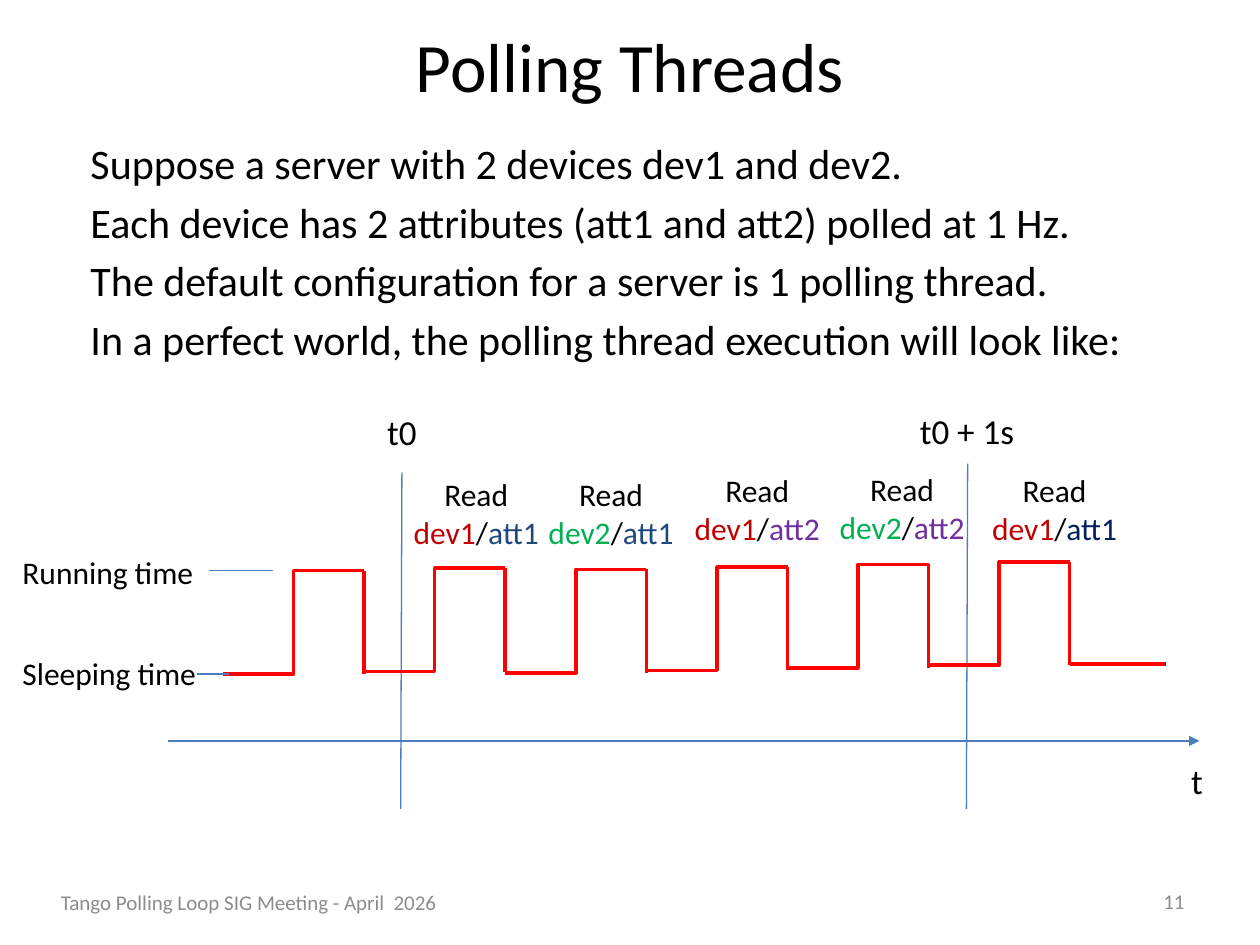
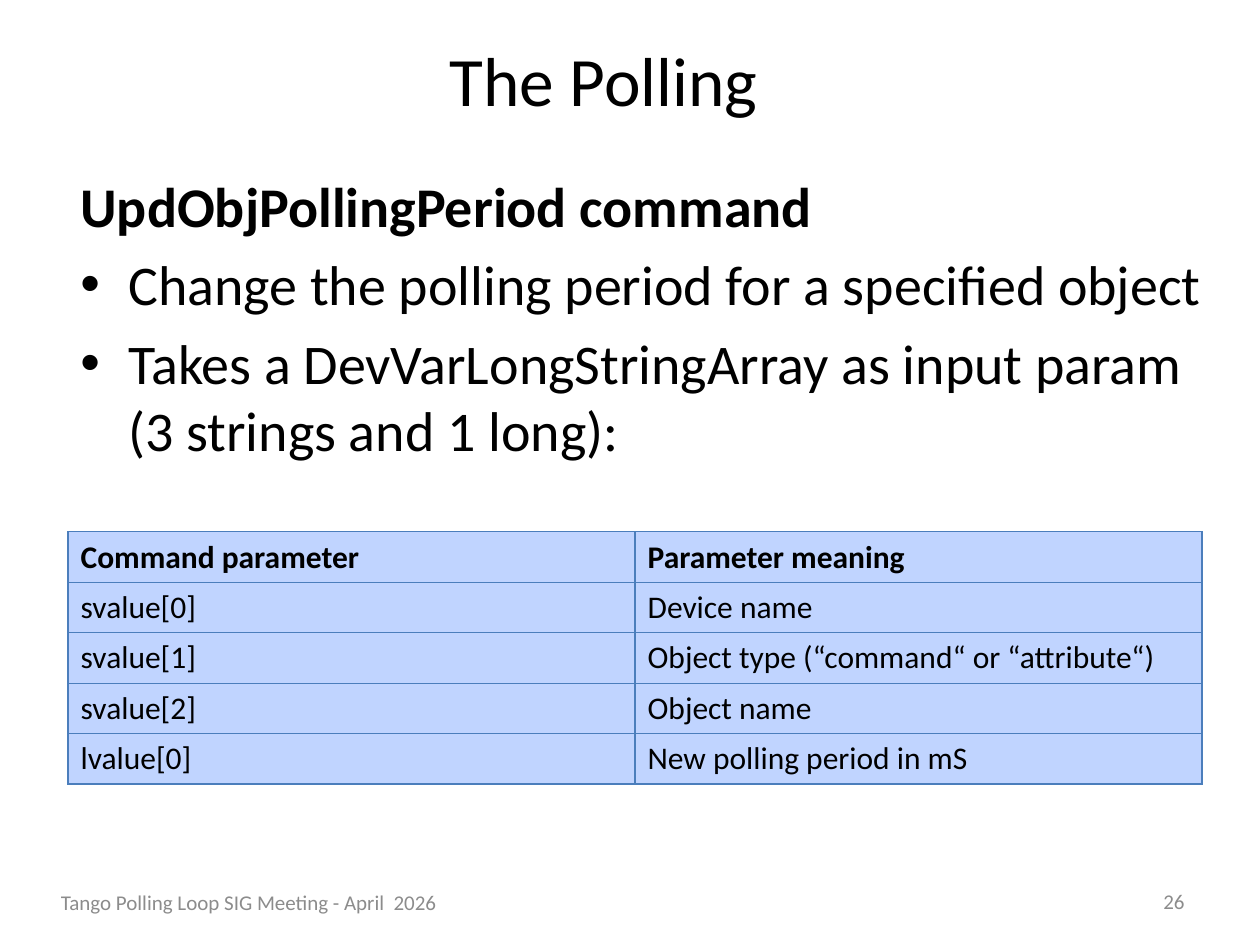
import pptx
import pptx.dml.color
import pptx.enum.shapes
import pptx.enum.text
import pptx.oxml
import pptx.oxml.ns
import pptx.util
from pptx.util import Inches

BLACK, GREY, BLUE, RED = "000000", "8C8C8C", "4B7EBC", "FF0000"
DEV_COLORS = {"dev1": "C00000", "dev2": "00B050"}
CELL_FILL = "C0D4FF"
FOOTER = "Tango Polling Loop SIG Meeting - April  2026"
LEFT = pptx.enum.text.PP_ALIGN.LEFT
CENTER = pptx.enum.text.PP_ALIGN.CENTER
RIGHT = pptx.enum.text.PP_ALIGN.RIGHT
TOP = pptx.enum.text.MSO_ANCHOR.TOP
MIDDLE = pptx.enum.text.MSO_ANCHOR.MIDDLE
STRAIGHT = pptx.enum.shapes.MSO_CONNECTOR.STRAIGHT
ELBOW = pptx.enum.shapes.MSO_CONNECTOR.ELBOW


def rgb(color):
    return pptx.dml.color.RGBColor.from_string(color)


def add_xml(parent, xml):
    """Append an element of the drawing namespace, given as text."""
    head, sep, rest = xml.partition(">")
    slash = "/" if head.endswith("/") else ""
    head = f"{head.rstrip('/')} {pptx.oxml.ns.nsdecls('a')}{slash}"
    parent.append(pptx.oxml.parse_xml(head + sep + rest))


class Deck:
    font = "Calibri"

    def __init__(self):
        self.prs = pptx.Presentation()
        self.prs.slide_width, self.prs.slide_height = Inches(10), Inches(7.5)
        self.slide = None

    def new_slide(self, title, number, left, top):
        self.slide = self.prs.slides.add_slide(self.prs.slide_layouts[6])
        self.text(left, top, 8.5, 0.75, [title], 39.6, align=CENTER, anchor=MIDDLE)
        self.text(7.17, 6.95, 2.33, 0.4, [number], 12, GREY, RIGHT, MIDDLE)
        self.text(0.2, 6.96, 3.55, 0.4, [FOOTER], 12, GREY, CENTER, MIDDLE)

    def run(self, p, text, size, color=BLACK, bold=False):
        for i, line in enumerate(text.split("\n")):
            if i:
                p.add_line_break()
            r = p.add_run()
            r.text = line
            r.font.name, r.font.size, r.font.bold = self.font, pptx.util.Pt(size), bold
            r.font.color.rgb = rgb(color)

    def text(self, x, y, w, h, paragraphs, size, color=BLACK, align=LEFT, anchor=TOP):
        """Add a text box; a paragraph is a string or a list of (text, color) runs."""
        sp = self.slide.shapes.add_textbox(Inches(x), Inches(y), Inches(w), Inches(h))
        tf = sp.text_frame
        tf.word_wrap, tf.vertical_anchor = True, anchor
        for i, runs in enumerate(paragraphs):
            p = tf.add_paragraph() if i else tf.paragraphs[0]
            p.alignment = align
            if i:
                p.space_before = pptx.util.Pt(0.2 * size)
            for text, run_color in [(runs, color)] if isinstance(runs, str) else runs:
                self.run(p, text, size, run_color)
        return tf

    def bullet(self, p):
        pPr = p._p.get_or_add_pPr()
        pPr.set("marL", str(Inches(0.38)))
        pPr.set("indent", str(-Inches(0.38)))
        add_xml(pPr, '<a:buFont typeface="Arial"/>')
        add_xml(pPr, '<a:buChar char="•"/>')

    def line(self, x1, y1, x2, y2, color=BLUE, width=0.75, kind=STRAIGHT, arrow=False):
        cx = self.slide.shapes.add_connector(
            kind, Inches(x1), Inches(y1), Inches(x2), Inches(y2))
        cx.line.color.rgb = rgb(color)
        cx.line.width = pptx.util.Pt(width)
        if arrow:
            add_xml(cx.line._get_or_add_ln(), '<a:tailEnd type="triangle"/>')
        add_xml(cx._element.spPr, "<a:effectLst/>")

    def table(self, x, y, col_width, row_height, rows, size):
        n_rows, n_cols = len(rows), len(rows[0])
        frame = self.slide.shapes.add_table(
            n_rows, n_cols, Inches(x), Inches(y),
            Inches(col_width * n_cols), Inches(row_height * n_rows))
        table = frame.table
        table.first_row = table.horz_banding = False
        for i, row in enumerate(rows):
            for j, text in enumerate(row):
                cell = table.cell(i, j)
                cell.vertical_anchor = MIDDLE
                self.run(cell.text_frame.paragraphs[0], text, size, bold=i == 0)
                self.borders(cell)
                cell.fill.solid()
                cell.fill.fore_color.rgb = rgb(CELL_FILL)

    def borders(self, cell):
        for side in "LRTB":
            add_xml(cell._tc.get_or_add_tcPr(),
                    f'<a:ln{side} w="{pptx.util.Pt(0.75)}"><a:solidFill>'
                    f'<a:srgbClr val="{BLUE}"/></a:solidFill></a:ln{side}>')


def polling_threads(deck):
    deck.new_slide("Polling Threads", "11", 0.75, 0.14)
    deck.text(0.62, 1.04, 9, 1.99, [
        "Suppose a server with 2 devices dev1 and dev2.",
        "Each device has 2 attributes (att1 and att2) polled at 1 Hz.",
        "The default configuration for a server is 1 polling thread.",
        "In a perfect world, the polling thread execution will look like:",
    ], 24)

    deck.line(1.33, 5.88, 9.52, 5.88, arrow=True)
    deck.line(3.19, 3.75, 3.18, 6.42)
    deck.line(7.68, 3.68, 7.67, 6.42)

    period, height = 1.12, 0.82
    for i, low in enumerate([5.35, 5.33, 5.34, 5.32, 5.3, 5.28]):
        start = 1.77 + i * period
        end, high = start + period, low - height
        deck.line(start, low, end, high, RED, 2, ELBOW)
        deck.line(end, high, end, low, RED, 2)
    deck.line(8.49, 5.27, 9.25, 5.27, RED, 1.75)

    for x, y, w, label in [(2.73, 3.21, 0.92, "t0"), (7.04, 3.2, 1.27, "t0 + 1s"),
                           (9.04, 5.98, 0.92, "t")]:
        deck.text(x, y, w, 0.44, [label], 20, align=CENTER)
    for y, label in [(5.14, "Sleeping time"), (4.34, "Running time")]:
        deck.text(0.08, y, 1.83, 0.4, [label], 18)
    deck.line(1.66, 4.53, 2.17, 4.53)
    deck.line(1.82, 5.35, 1.56, 5.35)

    for x, y, dev, att, att_color in [
        (3.18, 3.72, "dev1", "att1", "1F497D"),
        (4.25, 3.72, "dev2", "att1", "1F497D"),
        (5.41, 3.69, "dev1", "att2", "7030A0"),
        (6.56, 3.68, "dev2", "att2", "7030A0"),
        (7.77, 3.69, "dev1", "att1", "002060"),
    ]:
        runs = [("Read ", BLACK), (dev, DEV_COLORS[dev]), ("/", BLACK), (att, att_color)]
        deck.text(x, y, 1.2, 0.71, [runs], 18, align=CENTER)


def update_period(deck):
    deck.new_slide("The Polling", "26", 0.54, 0.25)
    tf = deck.text(0.54, 1.31, 9.35, 2.7, [
        "UpdObjPollingPeriod command",
        "Change the polling period for a specified object",
        "Takes a DevVarLongStringArray as input param\n(3 strings and 1 long):",
    ], 32)
    heading, *items = tf.paragraphs
    heading.runs[0].font.bold = True
    for p in items:
        deck.bullet(p)
    deck.table(0.54, 4.22, 4.5, 0.4, [
        ("Command parameter", "Parameter meaning"),
        ("svalue[0]", "Device name"),
        ("svalue[1]", "Object type (“command“ or “attribute“)"),
        ("svalue[2]", "Object name"),
        ("lvalue[0]", "New polling period in mS"),
    ], 18)


def main():
    deck = Deck()
    polling_threads(deck)
    update_period(deck)
    deck.prs.save("out.pptx")


if __name__ == "__main__":
    main()
